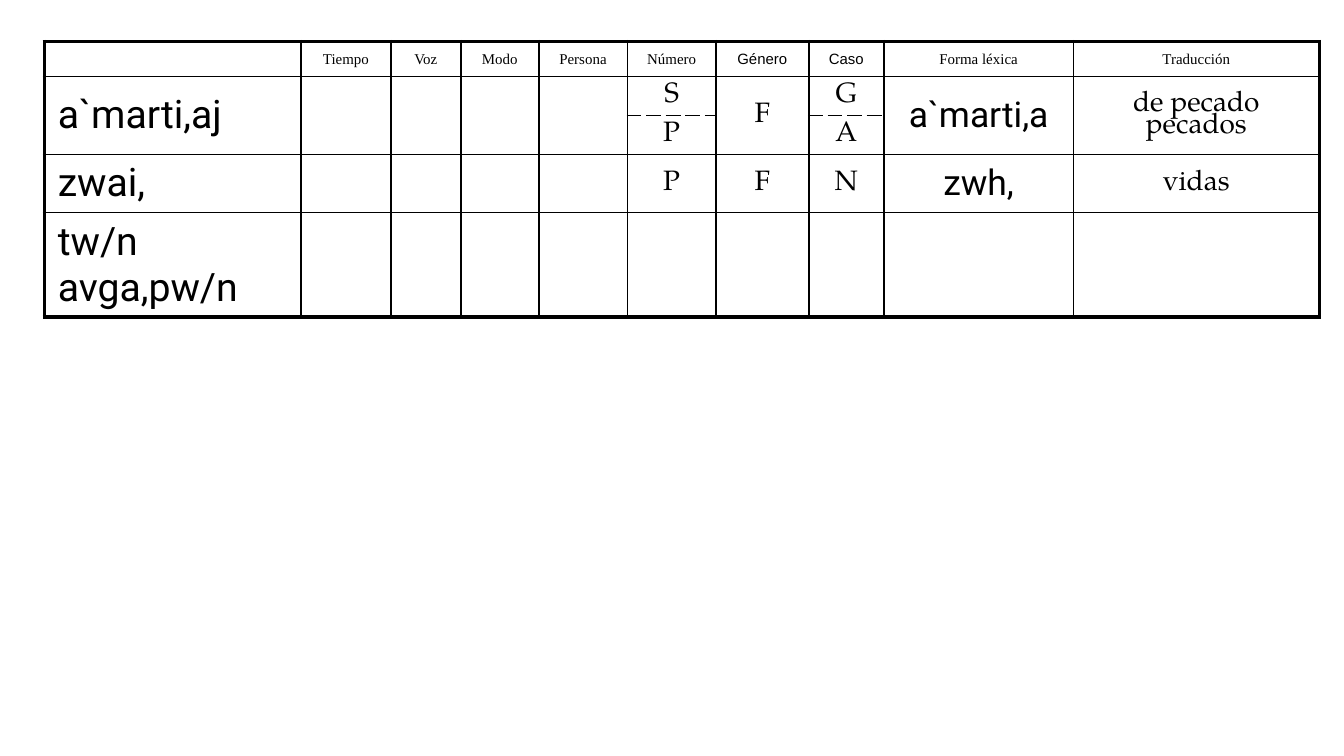
from lxml import etree
from pptx import Presentation
from pptx.dml.color import RGBColor
from pptx.enum import text
from pptx.oxml.ns import qn
from pptx.util import Pt

BLACK = RGBColor(0, 0, 0)
SERIF, SANS, GREEK, ANSWER = "Times New Roman", "Arial", "Roboto", "TeX Gyre Pagella"

# Content: one list per table row; the first word is split over two rows
HEADERS = ["", "Tiempo", "Voz", "Modo", "Persona", "Número", "Género", "Caso",
           "Forma léxica", "Traducción"]
ROWS = [
    HEADERS,
    ["a`marti,aj", "", "", "", "", "S", "F", "G", "a`marti,a", "de pecado\npecados"],
    ["", "", "", "", "", "P", "", "A", "", ""],
    ["zwai,", "", "", "", "", "P", "F", "N", "zwh,", "vidas"],
    ["tw/n avga,pw/n"] + [""] * 9,
]
WORD, TIEMPO, LEXICAL = 0, 1, HEADERS.index("Forma léxica")
SPLIT_COLS = [HEADERS.index("Número"), HEADERS.index("Caso")]
SANS_COLS = [HEADERS.index("Género"), HEADERS.index("Caso")]
UPPER, LOWER = 1, 2

# Geometry in points
LEFT, TOP = 23.76, 22.3
COL_WIDTHS = [137.5, 48.2, 37.4, 41.8, 47.5, 47.5, 49.7, 40.3, 101.5, 131.8]
ROW_HEIGHTS = [18.7, 20.9, 20.9, 31, 56.2]
OUTER, INNER, THIN = 2.25, 1, 0.75
LAST_ROW, LAST_COL = len(ROWS) - 1, len(HEADERS) - 1


def text_style(row, col):
    """Font, size and line spacing of a cell."""
    if row == 0:
        return (SANS if col in SANS_COLS else SERIF), 8, 1.0
    if col == WORD:
        return GREEK, 21, 1.0
    if col == LEXICAL:
        return GREEK, 19, 1.0
    return ANSWER, 15, 0.8


def cell_borders(row, col):
    """Width and dash of each side of a cell."""
    across = THIN if col in (WORD, TIEMPO) else INNER
    split = col in SPLIT_COLS
    return {
        "lnL": (OUTER if col == 0 else INNER, "solid"),
        "lnR": (OUTER if col == LAST_COL else INNER, "solid"),
        "lnT": (OUTER if row == 0 else across, "sysDash" if split and row == LOWER else "solid"),
        "lnB": (OUTER if row == LAST_ROW else across,
                "sysDash" if split and row == UPPER else "solid"),
    }


def draw_borders(cell, borders):
    properties = cell._tc.get_or_add_tcPr()
    for side, (width, dash) in borders.items():
        line = etree.SubElement(properties, qn("a:" + side), w=str(int(Pt(width))))
        fill = etree.SubElement(line, qn("a:solidFill"))
        etree.SubElement(fill, qn("a:srgbClr"), val=str(BLACK))
        etree.SubElement(line, qn("a:prstDash"), val=dash)


def write_cell(cell, words, row, col):
    font_name, size, spacing = text_style(row, col)
    cell.vertical_anchor = text.MSO_ANCHOR.MIDDLE
    cell.margin_left = cell.margin_right = Pt(7.2)
    cell.margin_top = cell.margin_bottom = Pt(2.88)
    cell.text_frame.text = words
    for paragraph in cell.text_frame.paragraphs:
        if not words:  # keeps empty cells from stretching their row
            etree.SubElement(paragraph._p, qn("a:endParaRPr"), sz="800")
            continue
        paragraph.alignment = text.PP_ALIGN.LEFT if col == WORD else text.PP_ALIGN.CENTER
        paragraph.line_spacing = spacing
        for run in paragraph.runs:
            run.font.name, run.font.size, run.font.bold = font_name, Pt(size), False
            run.font.color.rgb = BLACK


prs = Presentation()
prs.slide_width, prs.slide_height = Pt(720), Pt(405)
slide = prs.slides.add_slide(prs.slide_layouts[6])

# Parsing table
parsing = slide.shapes.add_table(len(ROWS), len(HEADERS), Pt(LEFT), Pt(TOP),
                                 Pt(sum(COL_WIDTHS)), Pt(sum(ROW_HEIGHTS))).table
parsing.first_row = parsing.horz_banding = False
for column, width in zip(parsing.columns, COL_WIDTHS):
    column.width = Pt(width)
for table_row, height in zip(parsing.rows, ROW_HEIGHTS):
    table_row.height = Pt(height)

# Cells
for r, row_words in enumerate(ROWS):
    for c, words in enumerate(row_words):
        cell = parsing.cell(r, c)
        write_cell(cell, words, r, c)
        draw_borders(cell, cell_borders(r, c))
        cell.fill.background()

# Only number and case keep two rows for the first word
for c in range(len(HEADERS)):
    if c not in SPLIT_COLS:
        parsing.cell(UPPER, c).merge(parsing.cell(LOWER, c))

prs.save("out.pptx")
